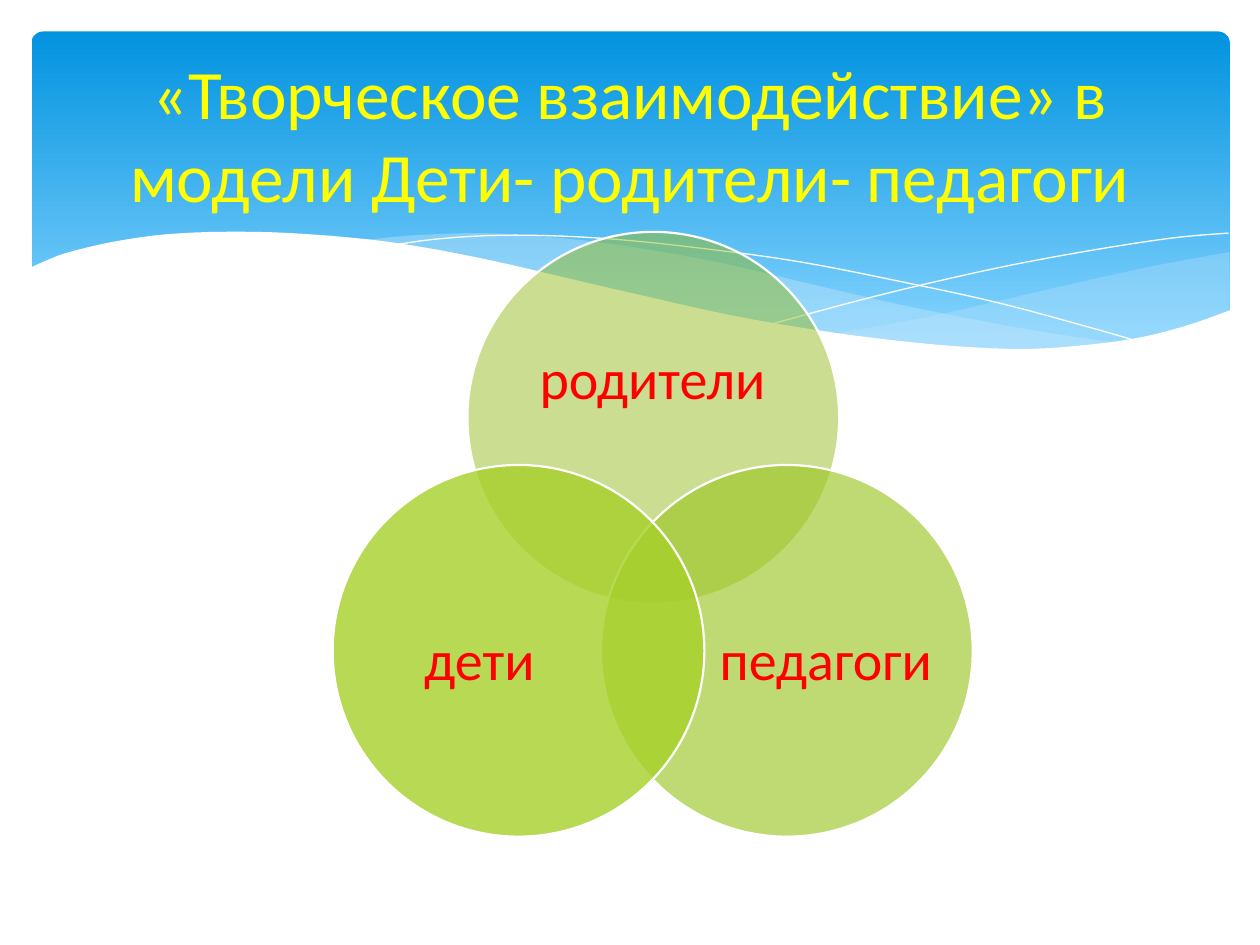
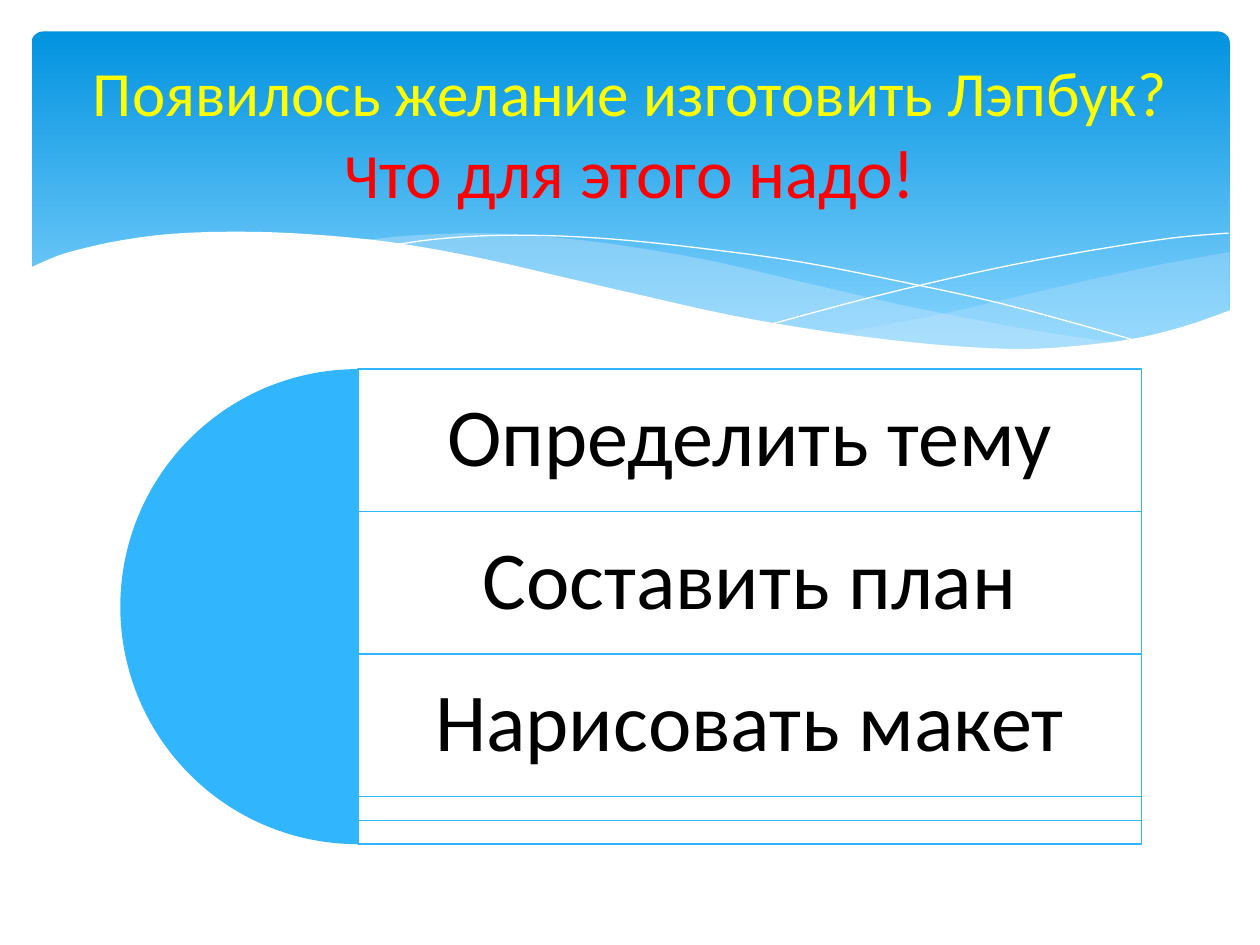
from dataclasses import dataclass
from typing import Any, NamedTuple, Optional

from lxml.etree import SubElement
from pptx import Presentation
from pptx.dml.color import RGBColor
from pptx.enum.shapes import MSO_SHAPE
from pptx.enum.text import MSO_ANCHOR, PP_ALIGN
from pptx.oxml.ns import qn
from pptx.util import Emu, Inches, Pt

WHITE = RGBColor(0xFF, 0xFF, 0xFF)
BLACK = RGBColor(0x00, 0x00, 0x00)
YELLOW = RGBColor(0xFF, 0xFF, 0x00)
RED = RGBColor(0xFF, 0x00, 0x00)
SKY = RGBColor(0x02, 0x93, 0xE0)
PALE_SKY = RGBColor(0x83, 0xD3, 0xFE)
MIST = RGBColor(0xC6, 0xE7, 0xFC)
AZURE = RGBColor(0x31, 0xB6, 0xFD)
OLIVE = RGBColor(0x96, 0xBD, 0x24)
LEAF = RGBColor(0x9E, 0xC7, 0x27)
LIME = RGBColor(0xA6, 0xD0, 0x29)

FONT = "Calibri"
COLUMNS = 100
WIDTH, HEIGHT = Inches(10), Inches(7.5)
CELL = WIDTH / COLUMNS
CURVE_STEPS = 4

Point = tuple[float, float]


class Box(NamedTuple):
    col: float
    row: float
    cols: float
    rows: float

    def emu(self) -> list[Emu]:
        return [grid(value) for value in self]


class TextRun(NamedTuple):
    text: str
    size: float
    color: RGBColor


@dataclass(frozen=True)
class Style:
    fill: Optional[RGBColor] = None
    opacity: int = 100
    line: Optional[RGBColor] = None
    weight: float = 0


@dataclass(frozen=True)
class Wave:
    strokes: list[list[Point]]
    style: Style
    closed: bool = True


@dataclass(frozen=True)
class Circle:
    label: str
    col: float
    row: float
    style: Style
    label_box: Box


TITLE_BOX = Box(5, 3.7, 90, 13.7)
BAND_BOX = Box(2.5, 2.5, 95.1, 27)
HAIRLINE = Style(line=WHITE)

WAVES = [
    Wave([[(97.6, 20), (92.1, 21), (86.1, 22.3), (77.9, 24.2), (72.9, 25.3),
           (66.1, 26.5)],
          [(66.1, 26.5), (70.5, 27.1), (75.7, 27.6), (81.4, 27.8),
           (86.3, 27.5), (90.5, 26.9), (94.2, 25.9), (97.6, 24.7)]],
         Style(MIST, 29)),
    Wave([[(89.3, 27.3), (83.7, 26.5), (77.5, 25.4), (70.6, 24), (62.9, 22.2),
           (56.9, 20.8), (51.4, 19.8), (46.5, 19.1), (42, 18.7), (38, 18.5),
           (34.4, 18.6), (31.3, 18.8), (28.6, 19.1)],
          [(28.6, 19.1), (34.2, 19.9), (40.4, 21.1), (44.9, 22.2), (53, 24),
           (60.1, 25.5), (66.5, 26.6), (72.2, 27.4), (77.3, 27.7),
           (81.8, 27.8), (85.7, 27.7), (89.3, 27.3)]],
         Style(MIST, 40)),
    Wave([[(30.9, 19.5), (34.4, 19), (38.7, 18.7), (43.3, 18.7), (48.9, 19),
           (55.6, 19.7), (63.6, 20.8), (72.7, 22.6), (79.5, 24.1),
           (86.9, 26.1), (90.7, 27.2)]], HAIRLINE, False),
    Wave([[(61.3, 25.7), (69.5, 23.5), (77.6, 21.6), (83.6, 20.4),
           (89.5, 19.4), (93.8, 18.8), (97.5, 18.5)]], HAIRLINE, False),
    Wave([[(97.7, 24.6), (94, 25.9), (89.9, 26.9), (85, 27.5), (80.9, 27.7),
           (76.1, 27.5), (70.8, 27), (64.8, 26.2), (57.9, 25), (50.3, 23.3),
           (44.7, 22), (39.1, 20.7), (34, 19.7), (29.2, 19), (23, 18.5),
           (17.7, 18.4), (13.2, 18.6), (9.5, 19.1), (6.7, 19.7), (4.6, 20.3),
           (2.3, 21.3)],
          [(2.3, 32.9), (97.7, 32.9)]], Style(WHITE)),
]

CIRCLE_SIZE = 29.5
CIRCLES = [
    Circle("родители", 37.1, 18.4, Style(OLIVE, 50, WHITE, 1.25),
           Box(41, 23.6, 21.6, 13.3)),
    Circle("педагоги", 47.7, 36.9, Style(LEAF, 65, WHITE, 1.25),
           Box(56.7, 44.5, 17.7, 16.2)),
    Circle("дети", 26.4, 36.9, Style(LIME, 80, WHITE, 1.25),
           Box(29.2, 44.5, 17.7, 16.2)),
]

STEPS = ["Определить тему", "Составить план", "Нарисовать макет"]
STEP_COL, STEP_ROW = 28.4, 29.3
STEP_COLS, STEP_ROWS = 62.2, 11.3
DISC_SIZE, DISC_SHRINK = 37.7, 13.2
HALF_PIE = (54, 162)


def grid(value: float) -> Emu:
    return Emu(round(value * CELL))


def set_attributes(target: Any, values: dict[str, Any]) -> None:
    for name, value in values.items():
        setattr(target, name, value)


def apply_style(sp: Any, style: Style) -> None:
    sp.shadow.inherit = False
    if style.fill is None:
        sp.fill.background()
    else:
        sp.fill.solid()
        sp.fill.fore_color.rgb = style.fill
        if style.opacity < 100:
            color = sp.fill._xPr.find(qn("a:solidFill"))[0]
            SubElement(color, qn("a:alpha"), val=str(style.opacity * 1000))
    if style.line is None:
        sp.line.fill.background()
    else:
        sp.line.color.rgb = style.line
        sp.line.width = Pt(style.weight)


def add_preset(slide: Any, kind: MSO_SHAPE, box: Box, style: Style) -> Any:
    sp = slide.shapes.add_shape(kind, *box.emu())
    apply_style(sp, style)
    return sp


def add_text(slide: Any, box: Box, runs: list[TextRun], inset: Point = (0, 0),
             spacing: float = 0.9) -> None:
    tf = slide.shapes.add_textbox(*box.emu()).text_frame
    side, end = grid(inset[0]), grid(inset[1])
    set_attributes(tf, {
        "word_wrap": True, "vertical_anchor": MSO_ANCHOR.MIDDLE,
        "margin_left": side, "margin_right": side,
        "margin_top": end, "margin_bottom": end,
    })
    p = tf.paragraphs[0]
    set_attributes(p, {"alignment": PP_ALIGN.CENTER, "line_spacing": spacing})
    for run in runs:
        r = p.add_run()
        r.text = run.text
        set_attributes(r.font, {"name": FONT, "size": Pt(run.size)})
        r.font.color.rgb = run.color


def smooth(knots: list[Point]) -> list[Point]:
    padded = [knots[0], *knots, knots[-1]]
    points = [knots[0]]
    for a, b, c, d in zip(padded, padded[1:], padded[2:], padded[3:]):
        for step in range(1, CURVE_STEPS + 1):
            t = step / CURVE_STEPS
            points.append(tuple(
                (2 * q + (s - o) * t + (2 * o - 5 * q + 4 * s - u) * t ** 2
                 + (3 * q - o - 3 * s + u) * t ** 3) / 2
                for o, q, s, u in zip(a, b, c, d)))
    return points


def add_wave(slide: Any, wave: Wave) -> None:
    points = [(grid(x), grid(y))
              for stroke in wave.strokes for x, y in smooth(stroke)]
    builder = slide.shapes.build_freeform(*points[0])
    builder.add_line_segments(points[1:], close=wave.closed)
    apply_style(builder.convert_to_shape(), wave.style)


def add_band(slide: Any) -> None:
    band = add_preset(slide, MSO_SHAPE.ROUNDED_RECTANGLE, BAND_BOX, Style(SKY))
    band.adjustments[0] = 0.034
    band.fill.gradient()
    band.fill.gradient_angle = 270
    for stop, color, position in zip(band.fill.gradient_stops,
                                     (SKY, PALE_SKY), (0, 0.9)):
        stop.color.rgb = color
        stop.position = position
    for wave in WAVES:
        add_wave(slide, wave)


def add_slide(prs: Any, title: list[TextRun]) -> Any:
    slide = prs.slides.add_slide(prs.slide_layouts[6])
    add_band(slide)
    add_text(slide, TITLE_BOX, title, (1, 0.5), 1.0)
    return slide


def add_circles(slide: Any) -> None:
    for circle in CIRCLES:
        box = Box(circle.col, circle.row, CIRCLE_SIZE, CIRCLE_SIZE)
        add_preset(slide, MSO_SHAPE.OVAL, box, circle.style)
        add_text(slide, circle.label_box, [TextRun(circle.label, 32, RED)])


def add_steps(slide: Any) -> None:
    for i, step in enumerate(STEPS):
        row = STEP_ROW + i * STEP_ROWS
        size = DISC_SIZE - i * DISC_SHRINK
        disc = add_preset(slide, MSO_SHAPE.PIE,
                          Box(STEP_COL - size / 2, row, size, size),
                          Style(AZURE))
        for k, angle in enumerate(HALF_PIE):
            disc.adjustments[k] = angle
        add_preset(slide, MSO_SHAPE.RECTANGLE,
                   Box(STEP_COL, row, STEP_COLS, size),
                   Style(WHITE, 90, AZURE, 0.75))
        add_text(slide, Box(STEP_COL, row, STEP_COLS, STEP_ROWS),
                 [TextRun(step, 47, BLACK)], (2, 2))


def main() -> None:
    prs = Presentation()
    set_attributes(prs, {"slide_width": WIDTH, "slide_height": HEIGHT})
    add_circles(add_slide(prs, [
        TextRun("«Творческое взаимодействие» в модели "
                "Дети- родители- педагоги", 39.6, YELLOW),
    ]))
    add_steps(add_slide(prs, [
        TextRun("Появилось желание изготовить Лэпбук? ", 36, YELLOW),
        TextRun("Ч", 36, RED),
        TextRun("то для этого надо!", 39.6, RED),
    ]))
    prs.save("out.pptx")


if __name__ == "__main__":
    main()
